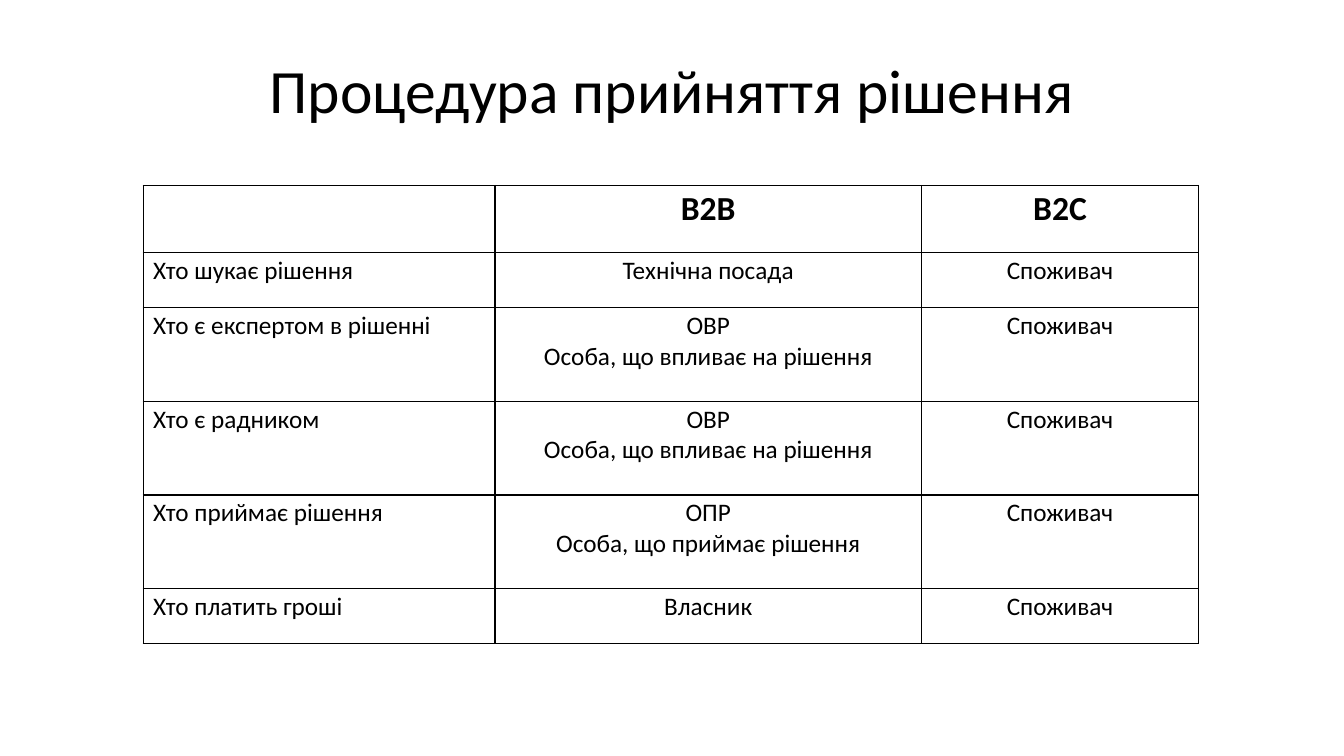
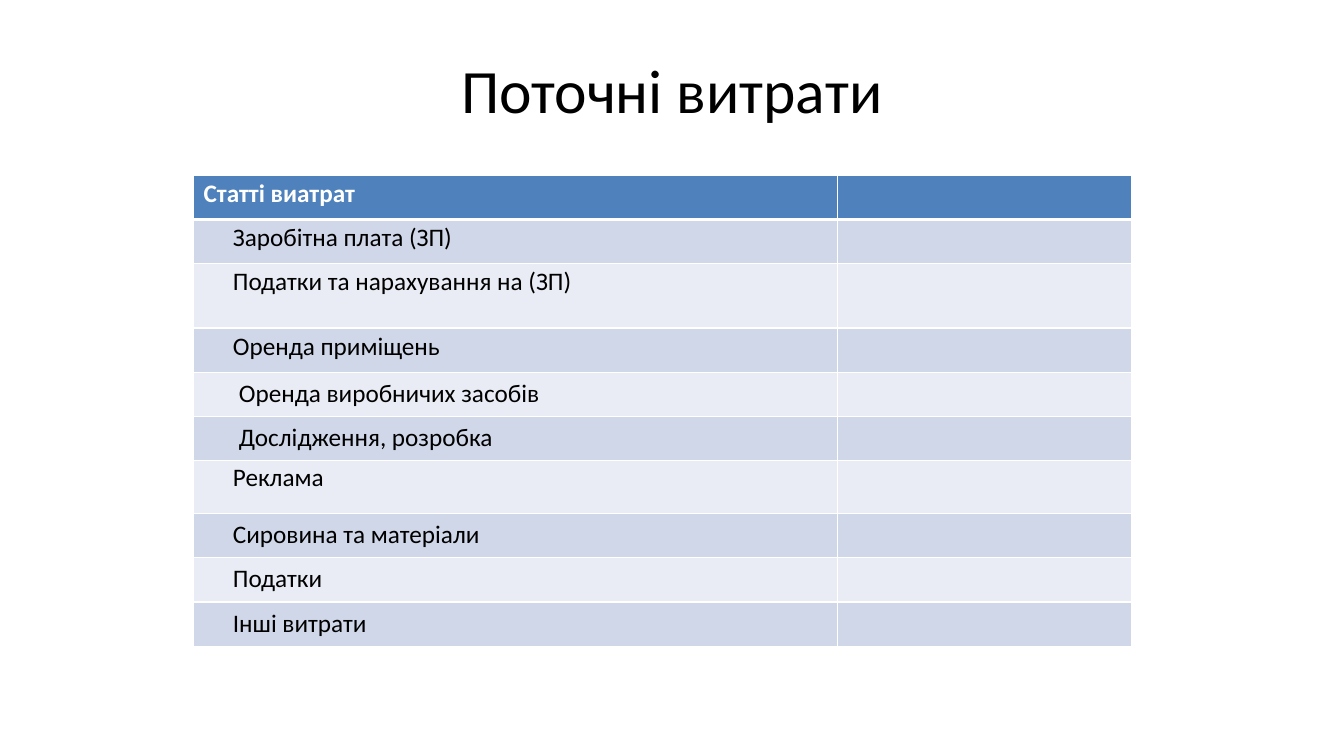
"""Build two slides that hold a decision table and a running cost table."""
import itertools

import lxml.etree
import pptx
import pptx.dml.color
import pptx.enum.text
import pptx.oxml.ns
import pptx.util

ALIGN = pptx.enum.text.PP_ALIGN
BLACK, WHITE = "000000", "FFFFFF"
HEADER_BLUE, BAND_DARK, BAND_LIGHT = "4F81BC", "D0D7E8", "E9ECF4"


def rgb(value):
    return pptx.dml.color.RGBColor.from_string(value)


def write(frame, text, size=18, color=BLACK, bold=False, align=ALIGN.LEFT,
          left=0, first_line=0, inset=0.03):
    frame.margin_left = frame.margin_right = frame.margin_bottom = 0
    frame.margin_top = pptx.util.Inches(inset)
    for number, line in enumerate(text.split("\n")):
        paragraph = frame.add_paragraph() if number else frame.paragraphs[0]
        properties = paragraph._p.get_or_add_pPr()
        properties.set("marL", str(pptx.util.Inches(left)))
        properties.set("indent", str(pptx.util.Inches(first_line)))
        paragraph.alignment = align
        paragraph.space_before = pptx.util.Pt(0)
        run = paragraph.add_run()
        run.text = line
        run.font.name = "Calibri"
        run.font.size = pptx.util.Pt(size)
        run.font.bold = bold
        run.font.color.rgb = rgb(color)


class Deck:
    def __init__(self):
        self.show = pptx.Presentation()
        self.show.slide_width = pptx.util.Inches(13.33)
        self.show.slide_height = pptx.util.Inches(7.5)
        self.slide = None

    def across(self, percent):
        return round(self.show.slide_width * percent / 100)

    def down(self, percent):
        return round(self.show.slide_height * percent / 100)

    def start(self, heading, width):
        self.slide = self.show.slides.add_slide(self.show.slide_layouts[5])
        title = self.slide.shapes.title
        title.left, title.top = self.across(50 - width / 2), self.down(6.8)
        title.width, title.height = self.across(width), self.down(10.13)
        frame = title.text_frame
        write(frame, heading, size=44, align=ALIGN.CENTER, inset=0.01)
        frame.word_wrap = False
        frame.auto_size = pptx.enum.text.MSO_AUTO_SIZE.NONE
        frame.vertical_anchor = pptx.enum.text.MSO_ANCHOR.TOP

    def table(self, left, top, widths, heights):
        table = self.slide.shapes.add_table(
            len(heights), len(widths), self.across(left), self.down(top),
            self.across(sum(widths)), self.down(sum(heights))).table
        table.first_row = table.horz_banding = False
        for column, width in zip(table.columns, widths):
            column.width = self.across(width)
        for row, height in zip(table.rows, heights):
            row.height = self.down(height)
        return table

    def cell(self, cell, text, line, fill=None, top=1, bottom=1, inset=0.03, **text_format):
        properties = cell._tc.get_or_add_tcPr()
        for side, points in (("L", 1), ("R", 1), ("T", top), ("B", bottom)):
            border = lxml.etree.SubElement(
                properties, pptx.oxml.ns.qn(f"a:ln{side}"), w=str(pptx.util.Pt(points)))
            solid = lxml.etree.SubElement(border, pptx.oxml.ns.qn("a:solidFill"))
            lxml.etree.SubElement(solid, pptx.oxml.ns.qn("a:srgbClr"), val=line)
        if fill:
            cell.fill.solid()
            cell.fill.fore_color.rgb = rgb(fill)
        else:
            cell.fill.background()
        if text:
            write(cell.text_frame, text, **text_format)
            cell.margin_left = cell.margin_right = cell.margin_bottom = 0
            cell.margin_top = pptx.util.Inches(inset)

    def save(self):
        self.show.save("out.pptx")


def decision_slide(deck):
    influencer = "ОВР\nОсоба, що впливає на рішення"
    steps = [
        ("Хто шукає рішення", "Технічна посада"),
        ("Хто є експертом в рішенні", influencer),
        ("Хто є радником", influencer),
        ("Хто приймає рішення", "ОПР\nОсоба, що приймає рішення"),
        ("Хто платить гроші", "Власник"),
    ]
    deck.start("Процедура прийняття рішення", 60.1)
    heights = [8.85] + [12.4 if "\n" in business else 7.3 for _, business in steps]
    table = deck.table(10.65, 24.53, (26.18, 31.73, 20.63), heights)
    for column, market in enumerate(("", "В2В", "В2С")):
        deck.cell(table.cell(0, column), market, BLACK,
                  size=24, bold=True, align=ALIGN.CENTER)
    for row, (question, business) in enumerate(steps, 1):
        deck.cell(table.cell(row, 0), question, BLACK, left=0.1)
        for column, answer in enumerate((business, "Споживач"), 1):
            deck.cell(table.cell(row, column), answer, BLACK, align=ALIGN.CENTER)


def cost_slide(deck):
    usual, tall, medium = 5.85, 8.5, 7
    costs = [
        ("Заробітна плата (ЗП)", usual, 0.03, 0.39),
        ("Податки та нарахування на (ЗП)", tall, 0.03, 0.39),
        ("Оренда приміщень", usual, 0.03, 0.39),
        ("Оренда виробничих засобів", usual, 0.06, 0.45),
        ("Дослідження, розробка", usual, 0.06, 0.45),
        ("Реклама", medium, 0.02, 0.39),
        ("Сировина та матеріали", usual, 0.06, 0.39),
        ("Податки", usual, 0.06, 0.39),
        ("Інші витрати", usual, 0.06, 0.39),
    ]
    deck.start("Поточні витрати", 31.6)
    heights = [usual] + [height for _, height, _, _ in costs]
    table = deck.table(14.4, 23.2, (47.93, 21.9), heights)
    for column, heading in enumerate(("Статті виатрат", "")):
        deck.cell(table.cell(0, column), heading, WHITE, fill=HEADER_BLUE,
                  bottom=3, color=WHITE, bold=True, left=0.1)
    bands = itertools.cycle((BAND_DARK, BAND_LIGHT))
    for row, ((cost, _, inset, indent), band) in enumerate(zip(costs, bands), 1):
        for column, text in enumerate((cost, "")):
            deck.cell(table.cell(row, column), text, WHITE, fill=band,
                      top=3 if row == 1 else 1, inset=inset, first_line=indent)


def main():
    deck = Deck()
    decision_slide(deck)
    cost_slide(deck)
    deck.save()


if __name__ == "__main__":
    main()
